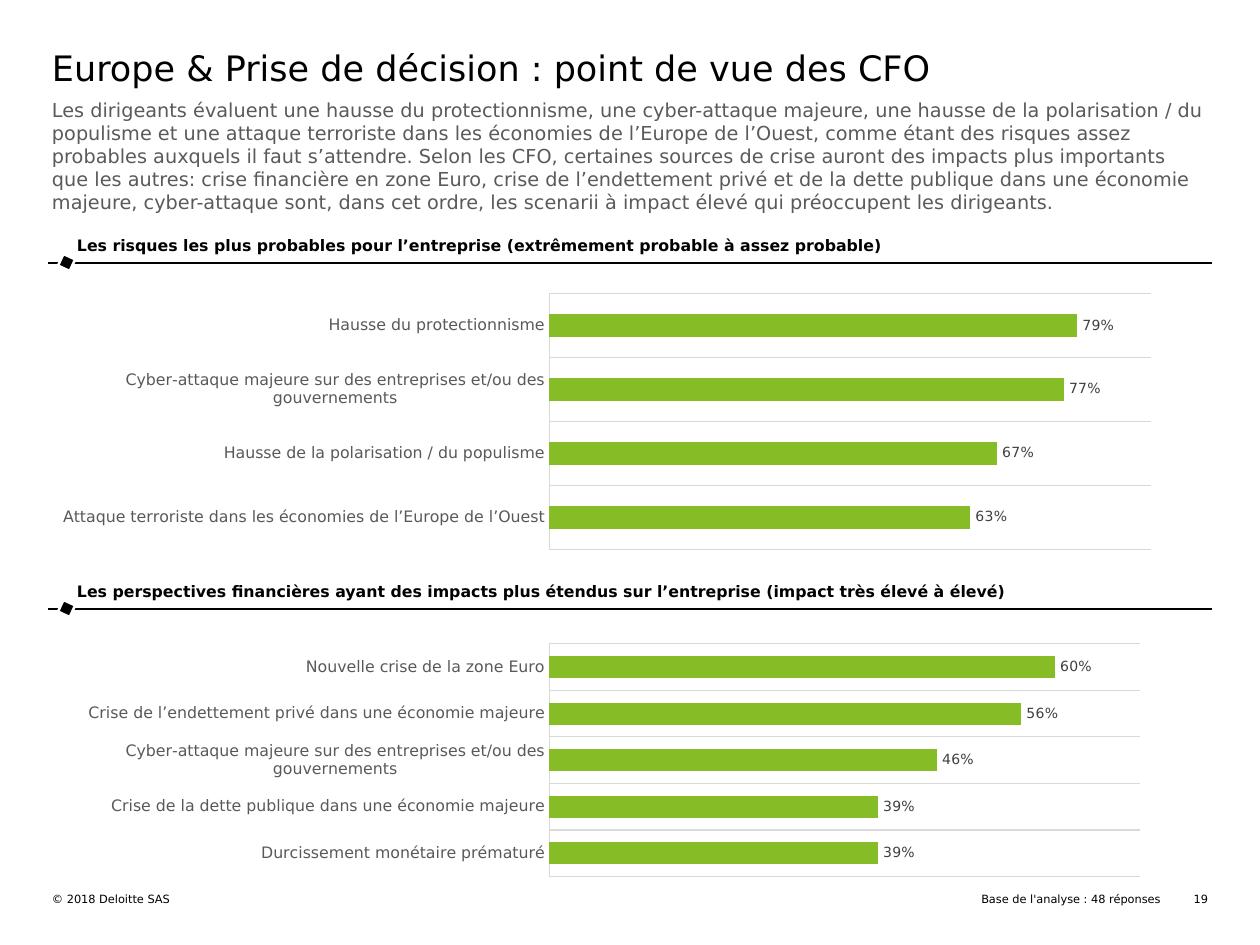
import pptx
import pptx.chart.data
import pptx.dml.color
import pptx.enum.chart
import pptx.enum.shapes
import pptx.enum.text
import pptx.oxml
import pptx.oxml.ns
import pptx.util

SCALE = 914400 / 126
FONT = "DejaVu Sans"
HUES = {"ink": "000000", "white": "FFFFFF", "body": "585A5C", "label": "595959",
        "value": "404040", "grid": "D9D9D9", "bar": "86BC25"}
ALIGN = pptx.enum.text.PP_ALIGN
ANCHOR = pptx.enum.text.MSO_ANCHOR


def px(*nums):
    return [pptx.util.Emu(round(num * SCALE)) for num in nums]


def hue(name):
    return pptx.dml.color.RGBColor.from_string(HUES[name])


def style(font, size, color, bold=False):
    font.name = FONT
    font.size = pptx.util.Pt(size)
    font.bold = bold
    font.color.rgb = hue(color)


def stroke(line, color, width):
    line.color.rgb = hue(color)
    line.width = pptx.util.Pt(width)


def write(shape, text, size, color="ink", bold=False, align=ALIGN.LEFT,
          anchor=ANCHOR.TOP, inset=(0, 0)):
    frame = shape.text_frame
    frame.word_wrap = True
    frame.auto_size = pptx.enum.text.MSO_AUTO_SIZE.NONE
    frame.vertical_anchor = anchor
    frame.margin_left, frame.margin_top = px(*inset)
    frame.margin_right, frame.margin_bottom = px(*inset)
    para = frame.paragraphs[0]
    para.alignment = align
    run = para.add_run()
    run.text = text
    style(run.font, size, color, bold)


def label(slide, box, text, size, **look):
    write(slide.shapes.add_textbox(*px(*box)), text, size, **look)


def header(slide, box, title, intro):
    left, top, width, height = box
    head = slide.shapes.title
    head.left, head.top, head.width, head.height = px(left, top, width, 47)
    write(head, title, 20, anchor=ANCHOR.MIDDLE)
    label(slide, (left, top + 54, width, height - 54), intro, 11, color="body")


def rule(slide, left, top, width):
    line = slide.shapes.add_connector(
        pptx.enum.shapes.MSO_CONNECTOR.STRAIGHT, *px(left + width, top, left, top))
    stroke(line.line, "ink", 1)
    line._element.spPr.append(pptx.oxml.parse_xml(
        "<a:effectLst %s/>" % pptx.oxml.ns.nsdecls("a")))
    mark = slide.shapes.add_shape(
        pptx.enum.shapes.MSO_SHAPE.RECTANGLE, *px(left + 12, top - 7, 13, 13))
    mark.rotation = 114.8
    mark.shadow.inherit = False
    mark.fill.solid()
    mark.fill.fore_color.rgb = hue("ink")
    stroke(mark.line, "white", 1.5)


def place(chart, plot):
    tags = "".join('<c:%s val="%s"/>' % pair for pair in zip("xywh", plot))
    xml = ('<c:layout %s><c:manualLayout><c:layoutTarget val="inner"/>'
           '<c:xMode val="edge"/><c:yMode val="edge"/>%s</c:manualLayout></c:layout>')
    area = chart._chartSpace.chart.plotArea
    for old in area.findall(pptx.oxml.ns.qn("c:layout")):
        area.remove(old)
    area.insert(0, pptx.oxml.parse_xml(xml % (pptx.oxml.ns.nsdecls("c"), tags)))


def bars(slide, box, rows, plot, peak, gap):
    data = pptx.chart.data.CategoryChartData(number_format="0%")
    data.categories = [name for name, _ in rows]
    data.add_series("Series 1", [rate for _, rate in rows])
    chart = slide.shapes.add_chart(
        pptx.enum.chart.XL_CHART_TYPE.BAR_CLUSTERED, *px(*box), data).chart
    style(chart.font, 10, "ink")
    chart.has_legend = False
    chart.has_title = False
    place(chart, plot)

    axis = chart.category_axis
    axis.reverse_order = True
    axis.major_tick_mark = pptx.enum.chart.XL_TICK_MARK.NONE
    axis.has_major_gridlines = True
    stroke(axis.major_gridlines.format.line, "grid", 0.75)
    stroke(axis.format.line, "grid", 0.75)
    style(axis.tick_labels.font, 9, "label")

    scale = chart.value_axis
    scale.visible = False
    scale.has_major_gridlines = False
    scale.minimum_scale = 0
    scale.maximum_scale = peak

    group = chart.plots[0]
    group.gap_width = gap
    group.vary_by_categories = False
    fill = group.series[0].format.fill
    fill.solid()
    fill.fore_color.rgb = hue("bar")
    group.has_data_labels = True
    tags = group.data_labels
    tags.show_value = True
    tags.number_format = "0%"
    tags.number_format_is_linked = False
    tags.position = pptx.enum.chart.XL_LABEL_POSITION.OUTSIDE_END
    style(tags.font, 8, "value")


def section(slide, box, lead, title, **graph):
    left, top, width, height = box
    rule(slide, left, top + 32, width)
    bars(slide, (left + 4, top + lead, width - 7, height - lead), **graph)
    label(slide, (left + 17, top, width - 21, 32), title, 9, bold=True, inset=(12, 5))


def footer(slide, box, owner, note, page):
    left, top, width, height = box
    right = left + width
    label(slide, (left, top, 553, height), owner, 6.5)
    label(slide, (right - 553, top, 506, height), note, 6.5, align=ALIGN.RIGHT)
    label(slide, (right - 31, top, 31, height), page, 6.5, align=ALIGN.RIGHT)


def main():
    deck = pptx.Presentation()
    deck.slide_width, deck.slide_height = px(1260, 945)
    slide = deck.slides.add_slide(deck.slide_layouts[5])
    header(
        slide, (52, 44, 1156, 159),
        "Europe & Prise de décision : point de vue des CFO",
        "Les dirigeants évaluent une hausse du protectionnisme, une cyber-attaque "
        "majeure, une hausse de la polarisation / du populisme et une attaque "
        "terroriste dans les économies de l’Europe de l’Ouest, comme étant des risques "
        "assez probables auxquels il faut s’attendre. Selon les CFO, certaines sources "
        "de crise auront des impacts plus importants que les autres: crise financière "
        "en zone Euro, crise de l’endettement privé et de la dette publique dans une "
        "économie majeure, cyber-attaque sont, dans cet ordre, les scenarii à impact "
        "élevé qui préoccupent les dirigeants.")
    cyber = "Cyber-attaque majeure sur des entreprises et/ou des gouvernements"
    section(
        slide, (48, 231, 1164, 336), 42,
        "Les risques les plus probables pour l’entreprise "
        "(extrêmement probable à assez probable)",
        rows=[("Hausse du protectionnisme", 0.79),
              (cyber, 0.77),
              ("Hausse de la polarisation / du populisme", 0.67),
              ("Attaque terroriste dans les économies de l’Europe de l’Ouest", 0.63)],
        plot=(0.43, 0.07, 0.52, 0.87), peak=0.9, gap=182)
    section(
        slide, (48, 577, 1164, 316), 45,
        "Les perspectives financières ayant des impacts plus étendus sur l’entreprise "
        "(impact très élevé à élevé)",
        rows=[("Nouvelle crise de la zone Euro", 0.6),
              ("Crise de l’endettement privé dans une économie majeure", 0.56),
              (cyber, 0.46),
              ("Crise de la dette publique dans une économie majeure", 0.39),
              ("Durcissement monétaire prématuré", 0.39)],
        plot=(0.43, 0.08, 0.51, 0.86), peak=0.7, gap=112)
    footer(slide, (52, 892, 1156, 14), "© 2018 Deloitte SAS",
           "Base de l'analyse : 48 réponses", "19")
    deck.save("out.pptx")


if __name__ == "__main__":
    main()
